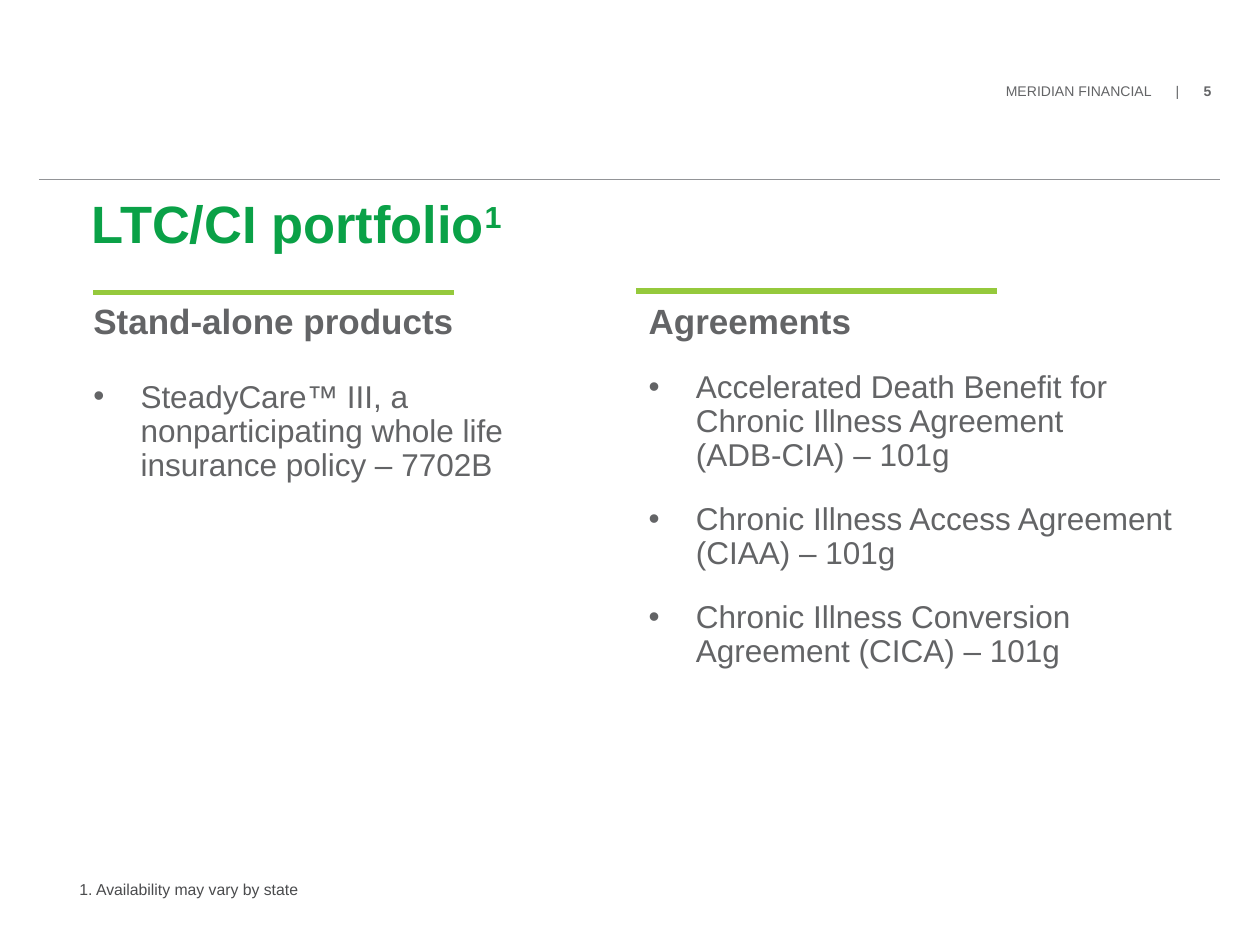
from lxml import etree
from pptx import Presentation
from pptx import util as u
from pptx.dml.color import RGBColor
from pptx.enum import shapes, text
from pptx.oxml import ns

Pt = u.Pt
FONT = "Arial"
GREEN = RGBColor(0x0A, 0xA1, 0x47)
LIME = RGBColor(0x95, 0xC9, 0x3C)
GRAY = RGBColor(0x63, 0x64, 0x66)
RULE_GRAY = RGBColor(0x92, 0x94, 0x97)
DARK = RGBColor(0x4A, 0x4B, 0x4D)
HANG = 27


def add_line(slide, left, top, width, color, weight):
    line = slide.shapes.add_connector(
        shapes.MSO_CONNECTOR.STRAIGHT, Pt(left), Pt(top), Pt(left + width), Pt(top))
    line.line.color.rgb = color
    line.line.width = Pt(weight)
    etree.SubElement(line._element.spPr, ns.qn("a:effectLst"))


def add_box(slide, left, top, width, height, insets=(0, 0, 0, 0)):
    frame = slide.shapes.add_textbox(Pt(left), Pt(top), Pt(width), Pt(height)).text_frame
    frame.word_wrap = True
    frame.vertical_anchor = text.MSO_ANCHOR.TOP
    (frame.margin_left, frame.margin_top,
     frame.margin_right, frame.margin_bottom) = map(Pt, insets)
    return frame


def style(paragraph, size, color, bold=False, spacing=None):
    paragraph.font.name = FONT
    paragraph.font.size = Pt(size)
    paragraph.font.color.rgb = color
    paragraph.font.bold = bold
    if spacing:
        paragraph.line_spacing = spacing


def add_bullet(frame, words, gap):
    item = frame.add_paragraph()
    item.text = words
    props = item._p.get_or_add_pPr()
    props.set("marL", str(Pt(HANG)))
    props.set("indent", str(-Pt(HANG)))
    etree.SubElement(props, ns.qn("a:buFont"), typeface=FONT)
    etree.SubElement(props, ns.qn("a:buChar"), char="•")
    style(item, 18, GRAY, spacing=0.9)
    item.space_before = Pt(gap)


def add_column(frame, heading, heading_spacing, items, gap):
    title = frame.paragraphs[0]
    title.text = heading
    style(title, 20, GRAY, True, heading_spacing)
    for words in items:
        add_bullet(frame, words, gap)


def add_page_header(slide):
    header = add_box(slide, 573.8, 46, 125.3, 11, (1, 1, 0, 0)).paragraphs[0]
    tabs = etree.SubElement(header._p.get_or_add_pPr(), ns.qn("a:tabLst"))
    for stop in (97, 113):
        etree.SubElement(tabs, ns.qn("a:tab"), pos=str(Pt(stop)), algn="l")
    style(header, 8, GRAY)
    header.add_run().text = "MERIDIAN FINANCIAL\t|\t"
    number = header.add_run()
    number.text = "5"
    number.font.bold = True


def add_title(slide):
    title = add_box(slide, 45.4, 110.9, 310.3, 74.9, (7.2, 3.6, 7.2, 3.6)).paragraphs[0]
    style(title, 30, GREEN, True, Pt(31))
    title.add_run().text = "LTC/CI portfolio"
    mark = title.add_run()
    mark.text = "1"
    mark.font._element.set("baseline", "30000")


def main():
    prs = Presentation()
    prs.slide_width, prs.slide_height = Pt(720), Pt(540)
    slide = prs.slides.add_slide(prs.slide_layouts[6])

    # Page header and title
    add_line(slide, 22.3, 102.5, 674.6, RULE_GRAY, 0.5)
    add_page_header(slide)
    add_title(slide)

    # Stand-alone products
    products = add_box(slide, 53.3, 177.8, 251.3, 157.7)
    add_column(products, "Stand-alone products", 0.7, [
        "SteadyCare™ III, a nonparticipating whole life insurance policy – 7702B",
    ], 23)

    # Agreements
    agreements = add_box(slide, 363.6, 167.8, 321.1, 238.3, (7.2, 3.6, 7.2, 3.6))
    add_column(agreements, "Agreements", None, [
        "Accelerated Death Benefit for Chronic Illness Agreement\v(ADB-CIA) – 101g",
        "Chronic Illness Access Agreement\v(CIAA) – 101g",
        "Chronic Illness Conversion Agreement (CICA) – 101g",
    ], 17)

    # Accent bars over the columns
    for left, top in ((53.3, 167), (363.6, 166.3)):
        add_line(slide, left, top, 205.9, LIME, 3)

    # Footnote
    footnote = add_box(slide, 45.4, 504, 640, 15).paragraphs[0]
    footnote.text = "1. Availability may vary by state"
    style(footnote, 9, DARK, spacing=0.9)

    prs.save("out.pptx")


if __name__ == "__main__":
    main()
